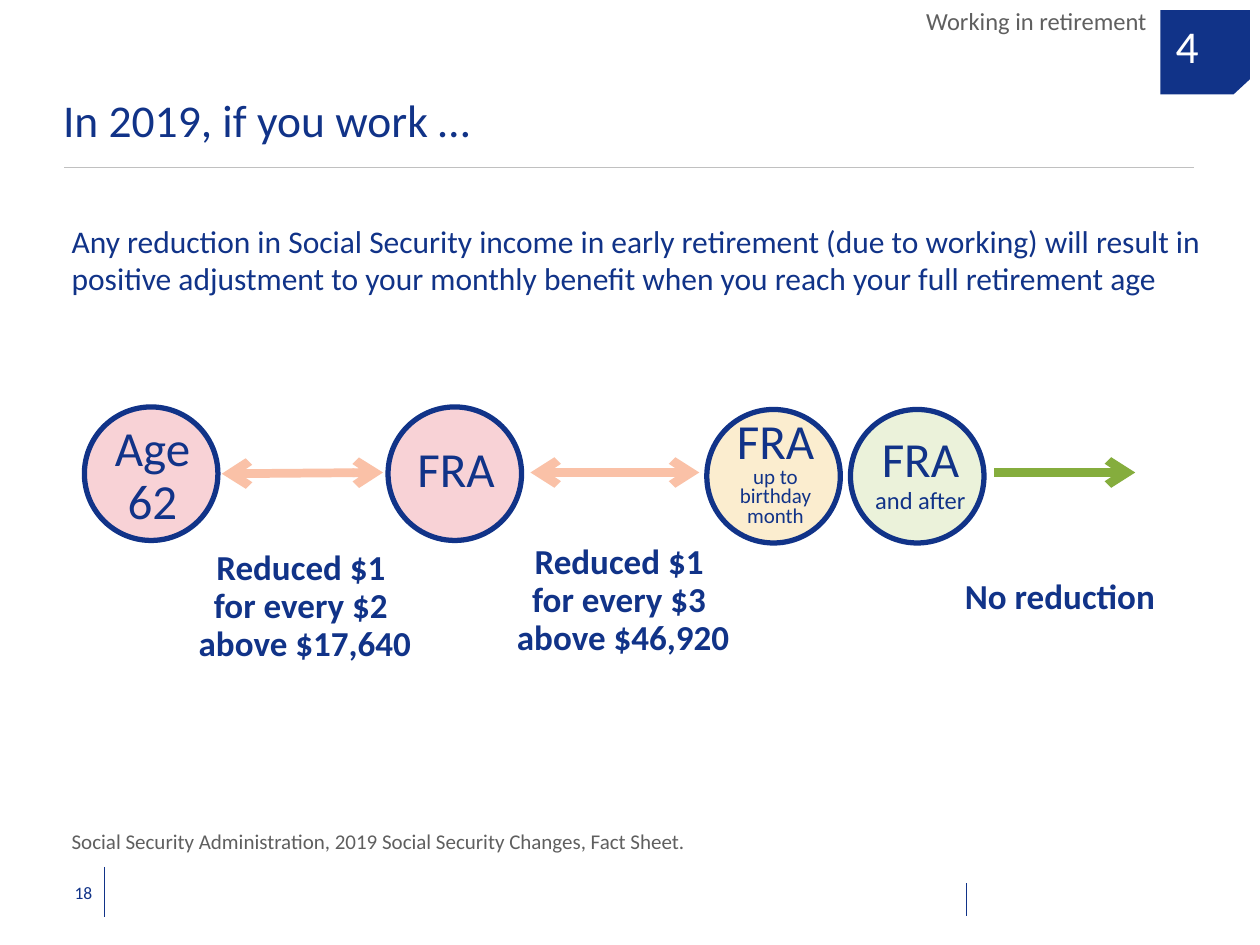
from lxml import etree
from pptx import Presentation
from pptx import util as u
from pptx.dml.color import RGBColor
from pptx.enum import shapes, text
from pptx.oxml.ns import qn

NAVY, GREY, RULE, WHITE = "113388", "5F5F5F", "C0C0C0", "FFFFFF"
ROSE, CREAM, MINT = "F8D2D6", "FBEDCF", "EBF2DA"
PEACH, GREEN = "FAC1A7", "85AD3D"
LEFT, MID, RIGHT = text.PP_ALIGN.LEFT, text.PP_ALIGN.CENTER, text.PP_ALIGN.RIGHT
TOP, HALF, BASE = (text.MSO_ANCHOR.TOP, text.MSO_ANCHOR.MIDDLE,
                   text.MSO_ANCHOR.BOTTOM)
PAD = (0.1, 0.05)


def hue(code):
    return RGBColor.from_string(code)


class Deck:
    font = "Calibri"

    def __init__(self, slide):
        self.slide = slide
        self.items = slide.shapes

    def style(self, runs, size, color, bold=False):
        for run in runs:
            run.font.name = self.font
            run.font.size = u.Pt(size)
            run.font.bold = bold
            run.font.color.rgb = hue(color)

    def frame(self, shape, anchor, pad):
        frame = shape.text_frame
        frame.word_wrap = True
        frame.auto_size = text.MSO_AUTO_SIZE.NONE
        frame.vertical_anchor = anchor
        frame.margin_left = frame.margin_right = u.Inches(pad[0])
        frame.margin_top = frame.margin_bottom = u.Inches(pad[1])
        return frame

    def put(self, para, words, size, color=NAVY, align=LEFT, space=None,
            bold=False):
        """Set and format the text of one paragraph."""
        para.text = words
        para.alignment = align
        para.line_spacing = space
        self.style(para.runs, size, color, bold)

    def title(self, box, words, size):
        shape = self.items.title
        shape.left, shape.top, shape.width, shape.height = map(u.Inches, box)
        frame = self.frame(shape, BASE, (0, 0))
        self.put(frame.paragraphs[0], words, size, space=0.9)

    def label(self, box, words, size, anchor=TOP, pad=PAD, **look):
        shape = self.items.add_textbox(*map(u.Inches, box))
        frame = self.frame(shape, anchor, pad)
        self.put(frame.paragraphs[0], words, size, **look)
        return frame

    def line(self, start, end, color=NAVY, width=0.75, heads=()):
        """Draw a line; heads names its arrow ends, headEnd before tailEnd."""
        line = self.items.add_connector(
            shapes.MSO_CONNECTOR.STRAIGHT, *map(u.Inches, start + end))
        line.line.color.rgb = hue(color)
        line.line.width = u.Pt(width)
        props = line._element.spPr.find(qn("a:ln"))
        for head in heads:
            etree.SubElement(props, qn("a:" + head), type="arrow")
        etree.SubElement(line._element.spPr, qn("a:effectLst"))

    def disc(self, left, top, side, fill):
        disc = self.items.add_shape(
            shapes.MSO_SHAPE.OVAL, *map(u.Inches, (left, top, side, side)))
        disc.shadow.inherit = False
        disc.fill.solid()
        disc.fill.fore_color.rgb = hue(fill)
        disc.line.color.rgb = hue(NAVY)
        disc.line.width = u.Pt(3)

    def patch(self, points, fill):
        spots = [(u.Inches(x), u.Inches(y)) for x, y in points]
        build = self.items.build_freeform(*spots[0])
        build.add_line_segments(spots[1:], close=True)
        patch = build.convert_to_shape()
        patch.shadow.inherit = False
        patch.fill.solid()
        patch.fill.fore_color.rgb = hue(fill)
        patch.line.fill.background()


def main():
    show = Presentation()
    show.slide_width, show.slide_height = u.Inches(10), u.Inches(7.5)
    deck = Deck(show.slides.add_slide(show.slide_layouts[5]))

    # Page frame
    deck.line((0.83, 6.88), (0.83, 7.28))
    deck.line((0.51, 1.33), (9.48, 1.33), RULE)
    deck.line((7.67, 7.01), (7.67, 7.27))
    deck.label((0.08, 6.88, 0.75, 0.4), "18", 10, HALF, align=RIGHT)
    deck.title((0.5, 0.29, 8.43, 0.88), "In 2019, if you work …", 26)

    # Section mark
    deck.patch([(9.21, 0.75), (9.79, 0.75), (9.92, 0.63), (9.92, 0.08),
                (9.21, 0.08)], NAVY)
    deck.label((4.85, 0.05, 4.35, 0.24), "Working in retirement", 14,
               pad=(0.1, 0), color=GREY, align=RIGHT)
    deck.label((9.33, 0.19, 0.56, 0.52), "4", 26, pad=(0, 0), color=WHITE,
               space=0.9)

    # Lead and source
    deck.label((0.47, 1.71, 9.21, 0.71),
               "Any reduction in Social Security income in early retirement "
               "(due to working) will result in positive adjustment to your "
               "monthly benefit when you reach your full retirement age", 18)
    deck.label((0.47, 6.53, 5.42, 0.31),
               "Social Security Administration, 2019 Social Security Changes, "
               "Fact Sheet.", 12, color=GREY)

    # Effect on income in each phase
    for box, words, align in (
            ((7.56, 4.55, 1.77, 0.4), "No reduction", LEFT),
            ((1.09, 4.32, 2.66, 1.01),
             "Reduced $1 \nfor every $2 \nabove $17,640", MID),
            ((3.25, 4.27, 3.39, 1.01),
             "Reduced $1 \nfor every $3 \nabove $46,920", MID)):
        deck.label(box, words, 20, align=align, space=0.9, bold=True)

    # Stages
    for left, top, fill in ((0.67, 3.23, ROSE), (3.08, 3.23, ROSE),
                            (5.61, 3.25, CREAM), (6.75, 3.25, MINT)):
        deck.disc(left, top, 1.06, fill)
    deck.label((0.67, 3.32, 1.08, 0.93), "Age 62", 28, align=MID, space=0.9)
    deck.label((3.08, 3.28, 1.08, 0.93), "FRA", 28, HALF, align=MID, space=0.9)
    month = deck.label((5.64, 3.4, 1.03, 0.93), "FRA", 28, align=MID,
                       space=u.Pt(20))
    deck.put(month.add_paragraph(), "up to birthday month", 12, align=MID,
             space=u.Pt(11))
    after = deck.label((6.8, 3.25, 1.01, 1.04), "FRA ", 28, HALF, align=MID,
                       space=0.9)
    run = after.paragraphs[0].add_run()
    run.text = "and after"
    deck.style([run], 14, NAVY)

    # Spans between stages
    both = ("headEnd", "tailEnd")
    deck.line((1.76, 3.76), (3.04, 3.75), PEACH, 5, both)
    deck.line((4.21, 3.75), (5.55, 3.75), PEACH, 5, both)
    deck.line((7.89, 3.75), (9.01, 3.75), GREEN, 5, both[1:])

    show.save("out.pptx")


if __name__ == "__main__":
    main()
